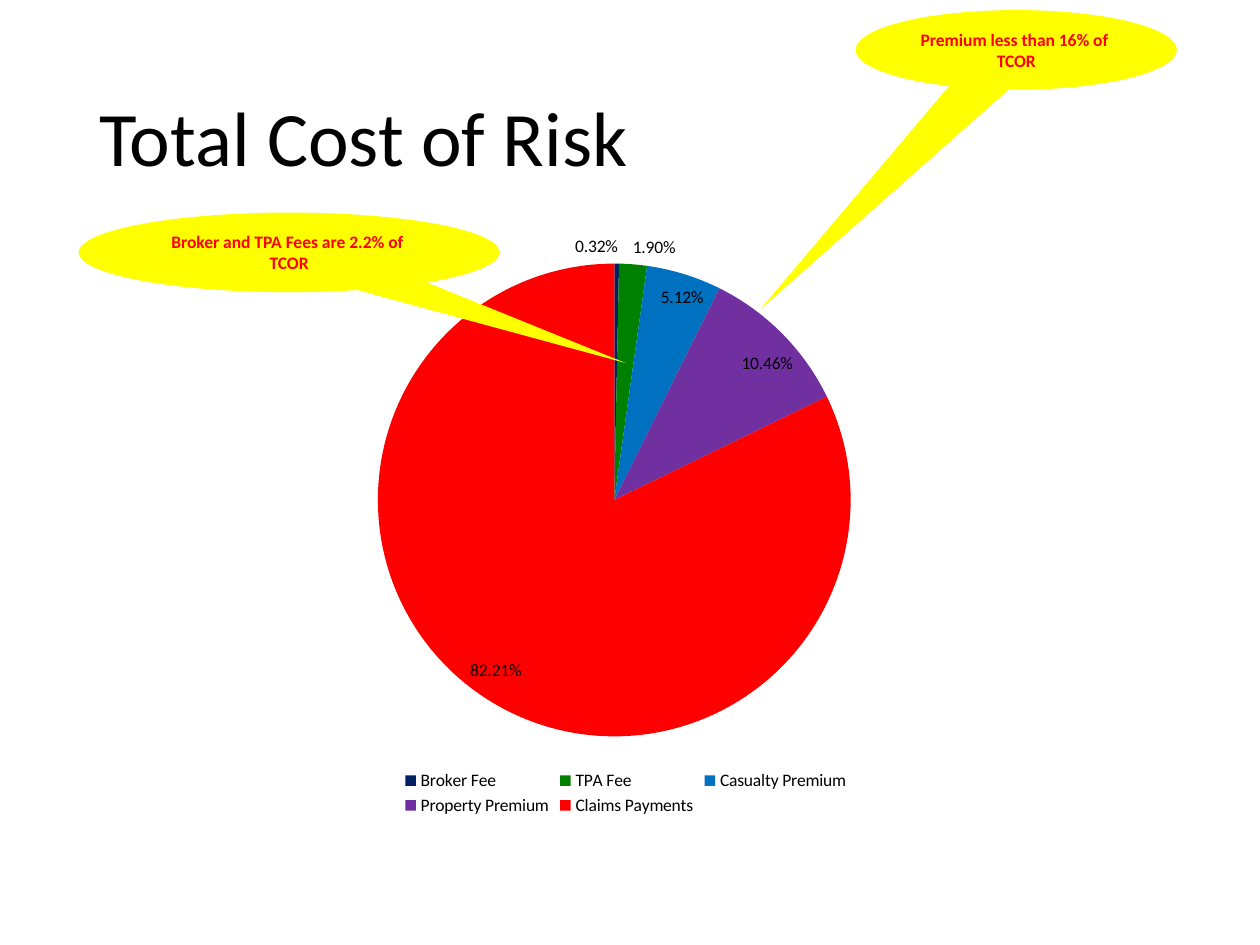
from typing import NamedTuple

from lxml.etree import SubElement
from pptx import Presentation
from pptx.chart.data import CategoryChartData
from pptx.dml.color import RGBColor
from pptx.enum.chart import XL_CHART_TYPE as ChartType
from pptx.enum.chart import XL_LABEL_POSITION as LabelPosition
from pptx.enum.chart import XL_LEGEND_POSITION as LegendPosition
from pptx.enum.shapes import MSO_SHAPE as Preset
from pptx.enum.text import MSO_ANCHOR as Anchor
from pptx.enum.text import PP_ALIGN as Align
from pptx.oxml.ns import qn
from pptx.util import Pt

FONT = "Calibri"
BLACK = RGBColor(0x00, 0x00, 0x00)
NAVY = RGBColor(0x00, 0x20, 0x60)
GREEN = RGBColor(0x00, 0x80, 0x00)
BLUE = RGBColor(0x00, 0x70, 0xC0)
PURPLE = RGBColor(0x70, 0x30, 0xA0)
RED = RGBColor(0xFF, 0x00, 0x00)
YELLOW = RGBColor(0xFF, 0xFF, 0x00)


class Slice(NamedTuple):
    name: str
    share: float
    color: RGBColor


class Callout(NamedTuple):
    text: str
    left: float
    top: float
    width: float
    height: float
    tip_x: float
    tip_y: float


SLICES = [
    Slice("Broker Fee", 0.0032, NAVY),
    Slice("TPA Fee", 0.019, GREEN),
    Slice("Casualty Premium", 0.0512, BLUE),
    Slice("Property Premium", 0.1046, PURPLE),
    Slice("Claims Payments", 0.8221, RED),
]
CALLOUTS = [
    Callout("Premium less than 16% of \vTCOR", 489, 5.75, 183.5, 45.5, -0.8, 3.27),
    Callout("Broker and TPA Fees are 2.2% of \vTCOR", 45, 121.5, 240.5, 45.5, 0.8, 1.39),
]
PLOT_LAYOUT = {"x": 0.17, "y": 0.07, "w": 0.63, "h": 0.79}


def set_font(font, size: float, color: RGBColor, bold: bool = False) -> None:
    font.name = FONT
    font.size = Pt(size)
    font.bold = bold
    font.color.rgb = color


def write_title(page, text: str) -> None:
    title = page.shapes.title
    title.left, title.top, title.width, title.height = Pt(49.5), Pt(29), Pt(621), Pt(104)
    title.text_frame.text = text
    title.text_frame.vertical_anchor = Anchor.MIDDLE
    para = title.text_frame.paragraphs[0]
    para.alignment = Align.LEFT
    para.line_spacing = 0.9
    set_font(para.font, 44, BLACK)


def place_plot(chart) -> None:
    plot_area = chart.element.find(".//" + qn("c:plotArea"))
    for old_layout in plot_area.findall(qn("c:layout")):
        plot_area.remove(old_layout)
    layout = SubElement(plot_area, qn("c:layout"))
    plot_area.insert(0, layout)
    manual = SubElement(layout, qn("c:manualLayout"))
    SubElement(manual, qn("c:layoutTarget")).set("val", "inner")
    for axis in "xy":
        SubElement(manual, qn(f"c:{axis}Mode")).set("val", "edge")
    for key, value in PLOT_LAYOUT.items():
        SubElement(manual, qn(f"c:{key}")).set("val", str(value))


def draw_pie(page, slices: list[Slice]) -> None:
    data = CategoryChartData(number_format="0.00%")
    data.categories = [piece.name for piece in slices]
    data.add_series("Series 1", [piece.share for piece in slices])
    chart = page.shapes.add_chart(
        ChartType.PIE, Pt(142.5), Pt(126.75), Pt(430), Pt(342), data
    ).chart
    set_font(chart.font, 10, BLACK)
    chart.has_title = False
    chart.has_legend = True
    chart.legend.position = LegendPosition.BOTTOM
    chart.legend.include_in_layout = False
    plot = chart.plots[0]
    plot.vary_by_categories = True
    for index, piece in enumerate(slices):
        fill = plot.series[0].points[index].format.fill
        fill.solid()
        fill.fore_color.rgb = piece.color
    labels = plot.series[0].data_labels
    labels.show_value = True
    labels.show_percentage = False
    labels.number_format = "0.00%"
    labels.number_format_is_linked = False
    labels.position = LabelPosition.BEST_FIT
    place_plot(chart)


def draw_callout(page, callout: Callout) -> None:
    box = page.shapes.add_shape(
        Preset.OVAL_CALLOUT,
        Pt(callout.left), Pt(callout.top), Pt(callout.width), Pt(callout.height),
    )
    box.shadow.inherit = False
    box.adjustments[0] = callout.tip_x
    box.adjustments[1] = callout.tip_y
    box.fill.solid()
    box.fill.fore_color.rgb = YELLOW
    box.line.fill.background()
    frame = box.text_frame
    frame.word_wrap = True
    frame.vertical_anchor = Anchor.MIDDLE
    para = frame.paragraphs[0]
    para.text = callout.text
    para.alignment = Align.CENTER
    set_font(para.font, 10, RED, bold=True)


def main() -> None:
    deck = Presentation()
    deck.slide_width, deck.slide_height = Pt(720), Pt(540)
    page = deck.slides.add_slide(deck.slide_layouts.get_by_name("Title Only"))
    write_title(page, "Total Cost of Risk")
    draw_pie(page, SLICES)
    for callout in CALLOUTS:
        draw_callout(page, callout)
    deck.save("out.pptx")


if __name__ == "__main__":
    main()
